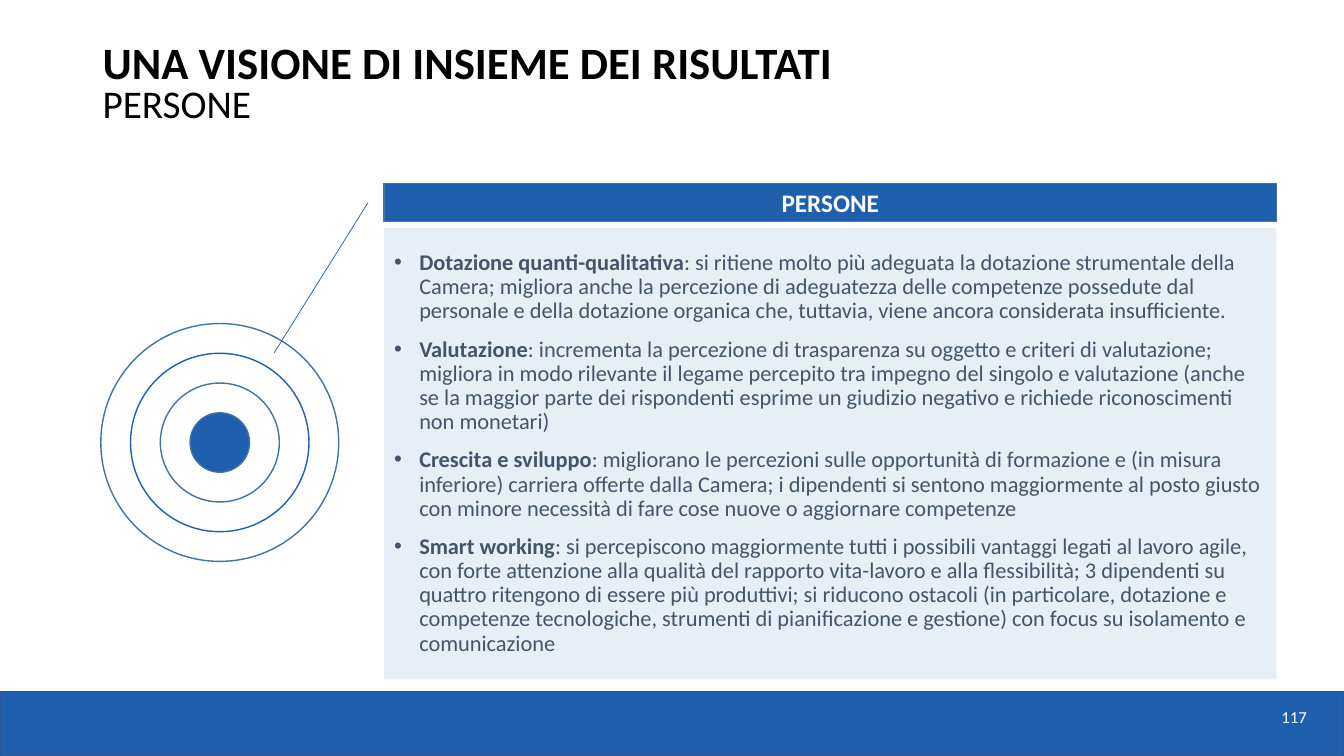
import pptx
import pptx.util
import pptx.dml.color
import pptx.enum.shapes
import pptx.enum.text
import pptx.oxml.ns
import pptx.oxml.xmlchemy

Inches, Pt = pptx.util.Inches, pptx.util.Pt
SHAPE = pptx.enum.shapes.MSO_SHAPE
ALIGN = pptx.enum.text.PP_ALIGN
ANCHOR = pptx.enum.text.MSO_ANCHOR
new_element = pptx.oxml.xmlchemy.OxmlElement

FONT = "Calibri"
BLUE, EDGE, FOOTER_EDGE = "1E5FAE", "43739E", "325491"
WHITE, BLACK, SLATE = "FFFFFF", "000000", "44546A"

TITLE = "UNA VISIONE DI INSIEME DEI RISULTATI"
SECTION = "PERSONE"
PAGE_NUMBER = "117"
FINDINGS = [
    ("Dotazione quanti-qualitativa",
     ": si ritiene molto più adeguata la dotazione strumentale della Camera; migliora anche "
     "la percezione di adeguatezza delle competenze possedute dal personale e della dotazione "
     "organica che, tuttavia, viene ancora considerata insufficiente."),
    ("Valutazione",
     ": incrementa la percezione di trasparenza su oggetto e criteri di valutazione; migliora "
     "in modo rilevante il legame percepito tra impegno del singolo e valutazione (anche se la "
     "maggior parte dei rispondenti esprime un giudizio negativo e richiede riconoscimenti non "
     "monetari)"),
    ("Crescita e sviluppo",
     ": migliorano le percezioni sulle opportunità di formazione e (in misura inferiore) "
     "carriera offerte dalla Camera; i dipendenti si sentono maggiormente al posto giusto con "
     "minore necessità di fare cose nuove o aggiornare competenze"),
    ("Smart working",
     ": si percepiscono maggiormente tutti i possibili vantaggi legati al lavoro agile, con "
     "forte attenzione alla qualità del rapporto vita-lavoro e alla flessibilità; 3 dipendenti "
     "su quattro ritengono di essere più produttivi; si riducono ostacoli (in particolare, "
     "dotazione e competenze tecnologiche, strumenti di pianificazione e gestione) con focus "
     "su isolamento e comunicazione"),
]

WIDTH, HEIGHT = 13.33, 7.5
FOOTER_TOP = 6.86
PANEL_LEFT, PANEL_WIDTH = 3.81, 8.85
TARGET_X, TARGET_Y, RING_STEP = 2.18, 4.39, 0.59
RINGS = [(4, WHITE, EDGE), (3, WHITE, BLUE), (2, WHITE, EDGE), (1, BLUE, EDGE)]


def paint(color_format, color):
    color_format.rgb = pptx.dml.color.RGBColor.from_string(color)


def add_shape(page, kind, left, top, width, height, fill, line=None):
    shape = page.shapes.add_shape(kind, Inches(left), Inches(top), Inches(width), Inches(height))
    shape.shadow.inherit = False
    shape.fill.solid()
    paint(shape.fill.fore_color, fill)
    if line:
        paint(shape.line.color, line)
        shape.line.width = Pt(1)
    else:
        shape.line.fill.background()
    return shape


def add_box(page, left, top, width, height):
    return page.shapes.add_textbox(Inches(left), Inches(top), Inches(width), Inches(height))


def start_text(shape, anchor, align, spacing=1.0):
    """Set up the text frame and return its first paragraph."""
    frame = shape.text_frame
    frame.word_wrap = True
    frame.vertical_anchor = anchor
    para = frame.paragraphs[0]
    para.alignment = align
    para.line_spacing = spacing
    return para


def add_span(para, text, size, color, bold=False):
    span = para.add_run()
    span.text = text
    span.font.name, span.font.size, span.font.bold = FONT, Pt(size), bold
    paint(span.font.color, color)


def add_bullet(para):
    settings = para._p.get_or_add_pPr()
    settings.set("marL", str(Inches(0.25)))
    settings.set("indent", str(Inches(-0.25)))
    for tag, name, value in (("a:buFont", "typeface", "Arial"), ("a:buChar", "char", "•")):
        item = new_element(tag)
        item.set(name, value)
        settings.append(item)


def add_footer(page):
    add_shape(page, SHAPE.RECTANGLE, 0, FOOTER_TOP, WIDTH, HEIGHT - FOOTER_TOP, BLUE, FOOTER_EDGE)
    box = add_box(page, 10.66, 6.84, 2.4, 0.58)
    add_span(start_text(box, ANCHOR.MIDDLE, ALIGN.RIGHT, 0.8), PAGE_NUMBER, 12, WHITE)


def add_title(page):
    box = add_box(page, 0.92, 0.4, 12.14, 0.69)
    para = start_text(box, ANCHOR.TOP, ALIGN.LEFT, 0.8)
    add_span(para, TITLE, 32, BLACK, bold=True)
    para.add_line_break()
    add_span(para, SECTION, 28, BLACK)


def add_target(page):
    for steps, fill, line in RINGS:
        size = steps * RING_STEP
        add_shape(page, SHAPE.OVAL, TARGET_X - size / 2, TARGET_Y - size / 2, size, size, fill, line)


def add_findings(page):
    panel = add_shape(page, SHAPE.RECTANGLE, PANEL_LEFT, 2.26, PANEL_WIDTH, 4.48, BLUE)
    color = panel._element.spPr.find(".//" + pptx.oxml.ns.qn("a:srgbClr"))
    alpha = new_element("a:alpha")
    alpha.set("val", "10000")
    color.append(alpha)
    para = start_text(panel, ANCHOR.MIDDLE, ALIGN.LEFT)
    for number, (topic, comment) in enumerate(FINDINGS):
        if number:
            para = panel.text_frame.add_paragraph()
        para.alignment = ALIGN.LEFT
        para.line_spacing, para.space_before = 0.9, Pt(10)
        add_bullet(para)
        add_span(para, topic, 16, SLATE, bold=True)
        add_span(para, comment, 16, SLATE)


def add_pointer(page):
    pointer = page.shapes.add_connector(
        pptx.enum.shapes.MSO_CONNECTOR.STRAIGHT,
        Inches(2.72), Inches(3.5), Inches(3.65), Inches(2.01))
    paint(pointer.line.color, BLUE)
    pointer.line.width = Pt(0.5)
    pointer._element.spPr.append(new_element("a:effectLst"))


def add_header(page):
    header = add_shape(page, SHAPE.RECTANGLE, PANEL_LEFT, 1.82, PANEL_WIDTH, 0.38, BLUE, EDGE)
    add_span(start_text(header, ANCHOR.MIDDLE, ALIGN.CENTER), SECTION, 18, WHITE, bold=True)


def main():
    deck = pptx.Presentation()
    deck.slide_width, deck.slide_height = Inches(WIDTH), Inches(HEIGHT)
    page = deck.slides.add_slide(deck.slide_layouts[6])
    for add_part in (add_footer, add_title, add_target, add_findings, add_pointer, add_header):
        add_part(page)
    deck.save("out.pptx")


if __name__ == "__main__":
    main()
